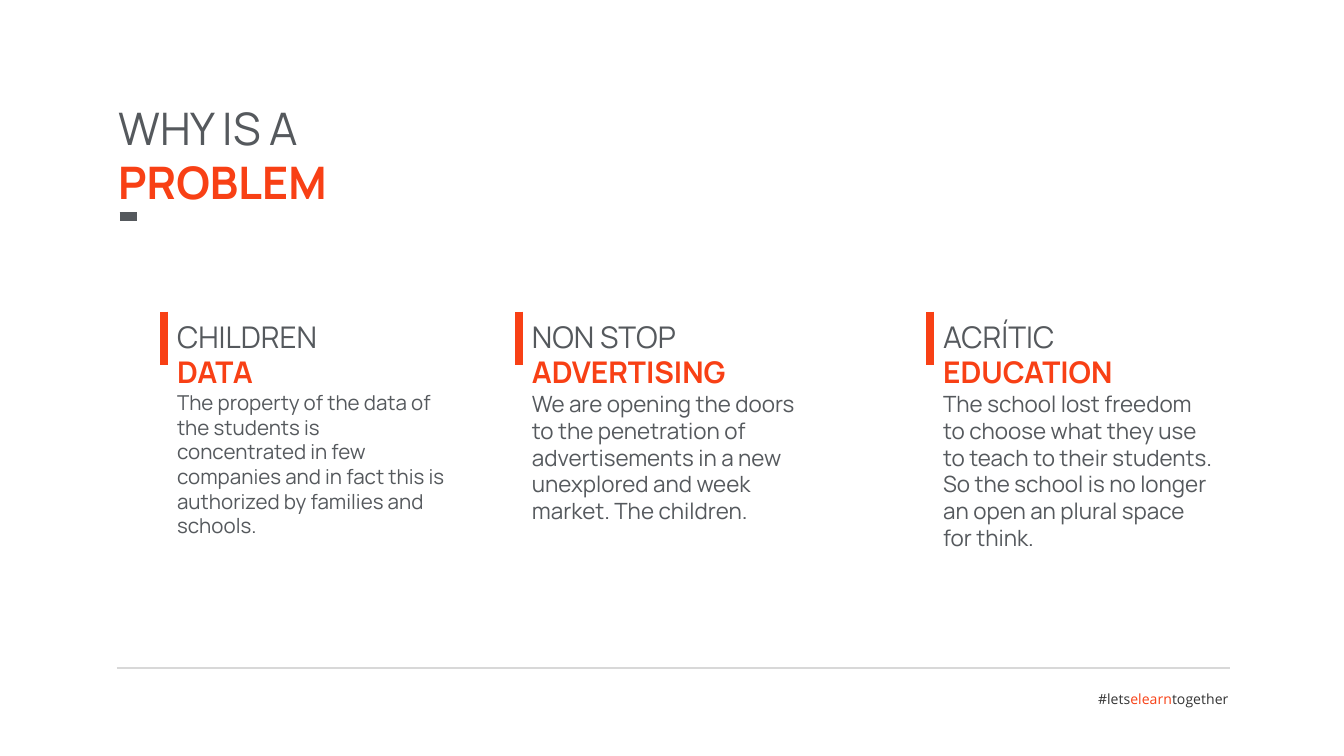
from lxml import etree
from pptx import Presentation
from pptx import util as u
from pptx.dml.color import RGBColor
from pptx.enum import shapes, text
from pptx.oxml.ns import qn

COLORS = {"grey": "55595D", "orange": "F84015", "dark": "333333", "rule": "D8D8D8"}


class SlideBuilder:
    heading_font = "Manrope"
    footer_font = "Open Sans"

    def __init__(self, slide):
        self.slide = slide

    def color(self, name):
        return RGBColor.from_string(COLORS[name])

    def line(self, x1, y1, x2, y2, color, width):
        connector = self.slide.shapes.add_connector(
            shapes.MSO_CONNECTOR.STRAIGHT, u.Pt(x1), u.Pt(y1), u.Pt(x2), u.Pt(y2))
        connector.line.color.rgb = self.color(color)
        connector.line.width = u.Pt(width)
        etree.SubElement(connector._element.spPr, qn("a:effectLst"))

    def frame(self, left, top, width, height):
        box = self.slide.shapes.add_textbox(
            u.Pt(left), u.Pt(top), u.Pt(width), u.Pt(height))
        box.text_frame.word_wrap = True
        return box.text_frame

    def text_block(self, left, top, width, height, lines):
        frame = self.frame(left, top, width, height)
        for index, (words, size, color, bold) in enumerate(lines):
            paragraph = frame.add_paragraph() if index else frame.paragraphs[0]
            paragraph.add_run().text = words
            font = paragraph.font
            font.name = self.heading_font
            font.size = u.Pt(size)
            font.bold = bold
            font.color.rgb = self.color(color)

    def footer(self, left, top, width, height, parts):
        paragraph = self.frame(left, top, width, height).paragraphs[0]
        paragraph.alignment = text.PP_ALIGN.RIGHT
        paragraph.font.name = self.footer_font
        paragraph.font.size = u.Pt(7.5)
        for words, color in parts:
            run = paragraph.add_run()
            run.text = words
            run.font.color.rgb = self.color(color)

    def column(self, left, height, first, second, body, body_size):
        top = 167
        self.text_block(left, top, 161.3, height, [
            (first, 16, "grey", False),
            (second, 16, "orange", True),
            (body, body_size, "grey", False),
        ])
        self.line(left, top, left, top + 28.8, "orange", 4.5)


def main():
    presentation = Presentation()
    presentation.slide_width = u.Pt(720)
    presentation.slide_height = u.Pt(405)
    builder = SlideBuilder(presentation.slides.add_slide(presentation.slide_layouts[6]))

    builder.line(62.6, 357.8, 658.8, 357.8, "rule", 1)
    builder.footer(548.6, 366.5, 116.6, 16.6, [
        ("#lets", "dark"), ("elearn", "orange"), ("together", "dark")])

    builder.text_block(56.2, 50.4, 209.5, 65.5, [
        ("WHY IS A", 24, "grey", False), ("PROBLEM", 24, "orange", True)])
    builder.line(64.1, 115.9, 73.4, 115.9, "grey", 4.5)

    columns = [
        (87.8, 102.2, "CHILDREN", "DATA",
         "The property of the data of the students is concentrated in few companies "
         "and in fact this is authorized by families and schools.", 11),
        (277.9, 106.6, "NON STOP", "ADVERTISING",
         "We are opening the doors to the penetration of advertisements in a new "
         "unexplored and week market. The children.", 12),
        (498.2, 106.6, "ACRÍTIC", "EDUCATION",
         "The school lost freedom to choose what they use to teach to their students. "
         "So the school is no longer an open an plural space for think.", 12),
    ]
    for column in columns:
        builder.column(*column)

    presentation.save("out.pptx")


if __name__ == "__main__":
    main()
